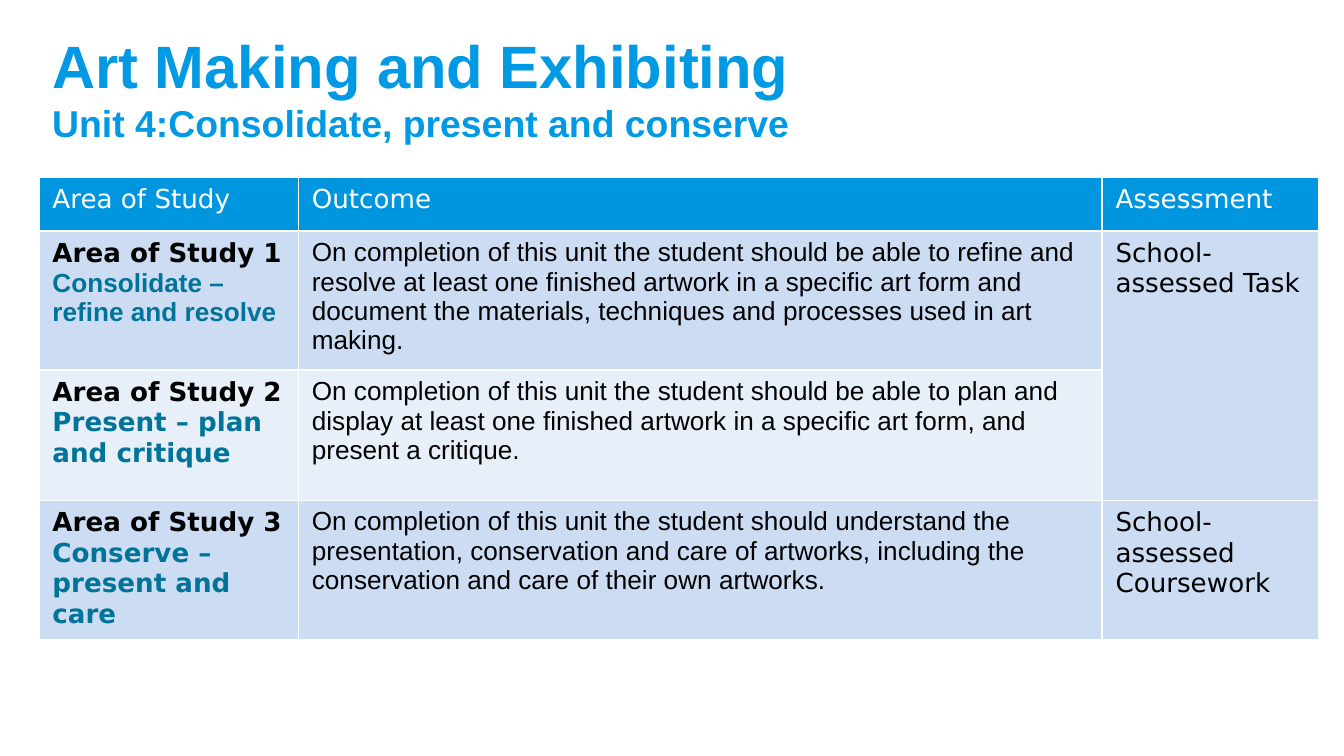
from pptx import Presentation
from pptx.util import Inches, Pt
from pptx.dml.color import RGBColor as Rgb
from pptx.enum.text import MSO_ANCHOR as Anchor
from lxml.etree import fromstring

THEME = dict(
    sans="Arial", wide="DejaVu Sans",
    title="0099E3", head="0096DF", topic="007399", ink="000000", white="FFFFFF",
    bands=("CCDDF3", "E7EFF9"),
    big=32, mid=20, body=14,
)
SANS, WIDE = THEME["sans"], THEME["wide"]
TITLE = "Art Making and Exhibiting"
UNIT = "Unit 4:Consolidate, present and conserve"
HEADS = ("Area of Study", "Outcome", "Assessment")
AREAS = (
    ("Area of Study 1", "Consolidate – refine and resolve", SANS,
     "On completion of this unit the student should be able to refine and resolve "
     "at least one finished artwork in a specific art form and document the "
     "materials, techniques and processes used in art making.",
     "School-assessed Task"),
    ("Area of Study 2", "Present – plan and critique", WIDE,
     "On completion of this unit the student should be able to plan and display "
     "at least one finished artwork in a specific art form, and present a critique.",
     None),
    ("Area of Study 3", "Conserve – present and care", WIDE,
     "On completion of this unit the student should understand the presentation, "
     "conservation and care of artworks, including the conservation and care of "
     "their own artworks.",
     "School-assessed Coursework"),
)
PAGE = 10
LEFT, WIDTH = 0.29, 9.53
COLS = (1.93, 5.98, 1.61)
ROWS = (0.4, 0.97, 0.97, 1.01)
NS = "http://schemas.openxmlformats.org/drawingml/2006/main"


def write(para, text, size=THEME["body"], font=WIDE, color=THEME["ink"], bold=False):
    run = para.add_run()
    run.text = text
    run.font.size = Pt(size)
    run.font.name = font
    run.font.bold = bold
    run.font.color.rgb = Rgb.from_string(color)
    para._p.get_or_add_endParaRPr().set("sz", str(size * 100))


def paint(cell, color):
    cell.fill.solid()
    cell.fill.fore_color.rgb = Rgb.from_string(color)
    props = cell._tc.get_or_add_tcPr()
    for spot, side in enumerate("LRTB"):
        props.insert(spot, fromstring(
            f'<a:ln{side} xmlns:a="{NS}" w="{int(Pt(1))}"><a:solidFill>'
            f'<a:srgbClr val="{THEME["white"]}"/></a:solidFill></a:ln{side}>'))


def add_title(slide):
    box = slide.shapes.add_textbox(Inches(LEFT), Inches(0.21), Inches(WIDTH), Inches(0.87))
    frame = box.text_frame
    frame.word_wrap = True
    frame.vertical_anchor = Anchor.MIDDLE
    para = frame.paragraphs[0]
    look = dict(font=SANS, color=THEME["title"], bold=True)
    write(para, TITLE, size=THEME["big"], **look)
    para.add_line_break()
    write(para, UNIT, size=THEME["mid"], **look)


def add_grid(slide):
    grid = slide.shapes.add_table(
        len(ROWS), len(COLS), Inches(LEFT), Inches(1.32),
        Inches(WIDTH), Inches(sum(ROWS))).table
    for col, width in zip(grid.columns, COLS):
        col.width = Inches(width)
    for row, height in zip(grid.rows, ROWS):
        row.height = Inches(height)
    for cell, text in zip(grid.rows[0].cells, HEADS):
        paint(cell, THEME["head"])
        write(cell.text_frame.paragraphs[0], text, color=THEME["white"])
    for num, (area, topic, font, goal, task) in enumerate(AREAS):
        cells = list(grid.rows[num + 1].cells)
        for cell in cells:
            paint(cell, THEME["bands"][num % 2])
        first, mid, last = (cell.text_frame for cell in cells)
        write(first.paragraphs[0], area, bold=True)
        write(first.add_paragraph(), topic, font=font, color=THEME["topic"], bold=True)
        write(mid.paragraphs[0], goal, font=SANS)
        if task:
            write(last.paragraphs[0], task)
    grid.cell(1, 2).merge(grid.cell(2, 2))


def main():
    deck = Presentation()
    deck.slide_width, deck.slide_height = Inches(PAGE), Inches(PAGE * 9 / 16)
    slide = deck.slides.add_slide(deck.slide_layouts[6])
    add_title(slide)
    add_grid(slide)
    deck.save("out.pptx")


if __name__ == "__main__":
    main()
